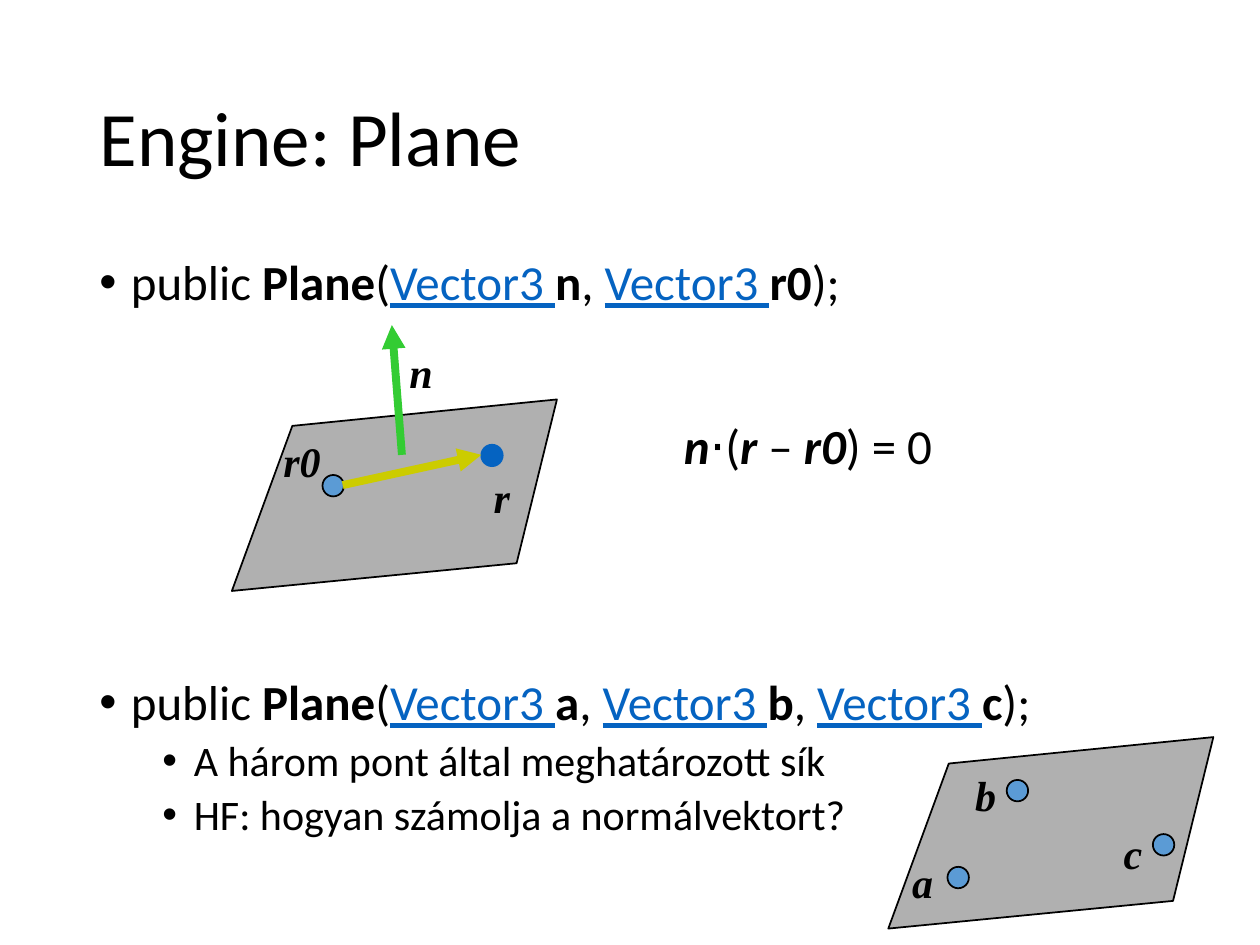
from lxml.etree import SubElement
from pptx import Presentation
from pptx.dml.color import RGBColor
from pptx.enum.shapes import MSO_CONNECTOR, MSO_SHAPE
from pptx.enum.text import MSO_ANCHOR, MSO_AUTO_SIZE, PP_ALIGN
from pptx.oxml.ns import qn
from pptx.util import Inches, Pt

BLACK, LINK, DOT = "000000", "0563C1", "5B9BD5"
GREEN, YELLOW = "33CC33", "CCCC00"

TITLE = "Engine: Plane"


def signature(*names):
    """Runs of a Plane constructor that takes one Vector3 per name."""
    runs = [("public ", ""), ("Plane", "b"), ("(", "")]
    for i, name in enumerate(names):
        if i:
            runs.append((", ", ""))
        runs += [("Vector3 ", "u"), (name, "b")]
    return runs + [(");", "")]


# runs, size, indent, space before
BULLETS = [
    (signature("n", "r0"), 28, 0.25, 10),
    (signature("a", "b", "c"), 28, 0.25, 210),
    ([("A három pont által meghatározott sík", "")], 24, 0.75, 5),
    ([("HF: hogyan számolja a normálvektort?", "")], 24, 0.75, 5),
]
FORMULA = [("n", "bi"), ("⋅(", ""), ("r", "bi"), (" – ", ""),
           ("r0", "bi"), (") = 0", "")]

# Corners relative to the top-left corner of the parallelogram
CORNERS = [(0, 0), (-0.48, 1.31), (1.78, 1.09), (2.1, -0.21)]
PLANES = [(2.32, 3.38), (7.53, 6.06)]
DOT_SIZE = 0.17
DOTS = [  # left, top, fill, line
    (3.82, 3.53, LINK, LINK),
    (2.56, 3.77, DOT, BLACK),
    (7.52, 6.88, DOT, BLACK),
    (9.15, 6.62, DOT, BLACK),
    (7.99, 6.19, DOT, BLACK),
]
ARROWS = [
    ((3.19, 3.61), (3.11, 2.58), GREEN),
    ((2.72, 3.85), (3.82, 3.61), YELLOW),
]
LABELS = [  # text, left, top, width
    ("r0", 2.15, 3.41, 0.5),
    ("r", 3.82, 3.69, 0.33),
    ("n", 3.15, 2.7, 0.39),
    ("a", 7.14, 6.75, 0.37),
    ("b", 7.64, 6.06, 0.37),
    ("c", 8.82, 6.52, 0.35),
]


def rgb(color):
    return RGBColor.from_string(color)


def add_runs(p, runs, size, font="Calibri"):
    """Add (text, style) runs; style letters are b, i and u (u marks a link)."""
    for text, style in runs:
        r = p.add_run()
        r.text = text
        f = r.font
        f.name, f.size = font, Pt(size)
        f.bold, f.italic, f.underline = (k in style for k in "biu")
        f.color.rgb = rgb(LINK if "u" in style else BLACK)


def set_indent(p, left, first=0.0):
    pPr = p._p.get_or_add_pPr()
    pPr.set("marL", str(Inches(left)))
    pPr.set("indent", str(Inches(first)))
    return pPr


def add_text(s, left, top, width, height, wrap=False):
    tf = s.shapes.add_textbox(*map(Inches, (left, top, width, height))).text_frame
    tf.word_wrap = wrap
    if not wrap:
        tf.auto_size = MSO_AUTO_SIZE.SHAPE_TO_FIT_TEXT
    return tf


def paint(sp, fill, line):
    sp.shadow.inherit = False
    sp.fill.solid()
    sp.fill.fore_color.rgb = rgb(fill)
    sp.line.color.rgb = rgb(line)
    sp.line.width = Pt(1)


def add_title(s):
    title = s.shapes.title
    title.left, title.top, title.width, title.height = map(
        Inches, (0.69, 0.4, 8.62, 1.45))
    title.text_frame.vertical_anchor = MSO_ANCHOR.MIDDLE
    p = title.text_frame.paragraphs[0]
    p.alignment, p.line_spacing = PP_ALIGN.LEFT, 0.9
    add_runs(p, [(TITLE, "")], 44)


def add_bullets(s):
    tf = add_text(s, 0.69, 2, 8.62, 4.76, wrap=True)
    for i, (runs, size, indent, before) in enumerate(BULLETS):
        p = tf.add_paragraph() if i else tf.paragraphs[0]
        p.level = int(indent > 0.25)
        p.line_spacing, p.space_before = 0.9, Pt(before)
        pPr = set_indent(p, indent, -0.25)
        SubElement(pPr, qn("a:buFont"), typeface="Arial")
        SubElement(pPr, qn("a:buChar"), char="•")
        add_runs(p, runs, size)


def add_plane(s, x, y):
    points = [(Inches(x + dx), Inches(y + dy)) for dx, dy in CORNERS]
    builder = s.shapes.build_freeform(*points[0])
    builder.add_line_segments(points[1:], close=True)
    sp = builder.convert_to_shape()
    paint(sp, BLACK, BLACK)
    color = sp._element.spPr.find(qn("a:solidFill"))[0]
    SubElement(color, qn("a:alpha"), val="31000")


def add_arrow(s, start, end, color):
    line = s.shapes.add_connector(
        MSO_CONNECTOR.STRAIGHT, *map(Inches, start + end))
    line.line.color.rgb = rgb(color)
    line.line.width = Pt(4.5)
    SubElement(line.line._get_or_add_ln(), qn("a:tailEnd"), type="triangle")
    SubElement(line._element.spPr, qn("a:effectLst"))


def main():
    prs = Presentation()
    prs.slide_width, prs.slide_height = Inches(10), Inches(7.5)
    s = prs.slides.add_slide(prs.slide_layouts[5])
    add_title(s)
    add_bullets(s)

    p = add_text(s, 4.33, 3.25, 3.18, 0.57).paragraphs[0]
    set_indent(p, 1)
    add_runs(p, FORMULA, 28)

    for x, y in PLANES:
        add_plane(s, x, y)
    for x, y, fill, line in DOTS:
        sp = s.shapes.add_shape(
            MSO_SHAPE.OVAL, *map(Inches, (x, y, DOT_SIZE, DOT_SIZE)))
        paint(sp, fill, line)
    for start, end, color in ARROWS:
        add_arrow(s, start, end, color)
    for text, x, y, width in LABELS:
        p = add_text(s, x, y, width, 0.5).paragraphs[0]
        add_runs(p, [(text, "bi")], 24, "Times New Roman")
    prs.save("out.pptx")


if __name__ == "__main__":
    main()
